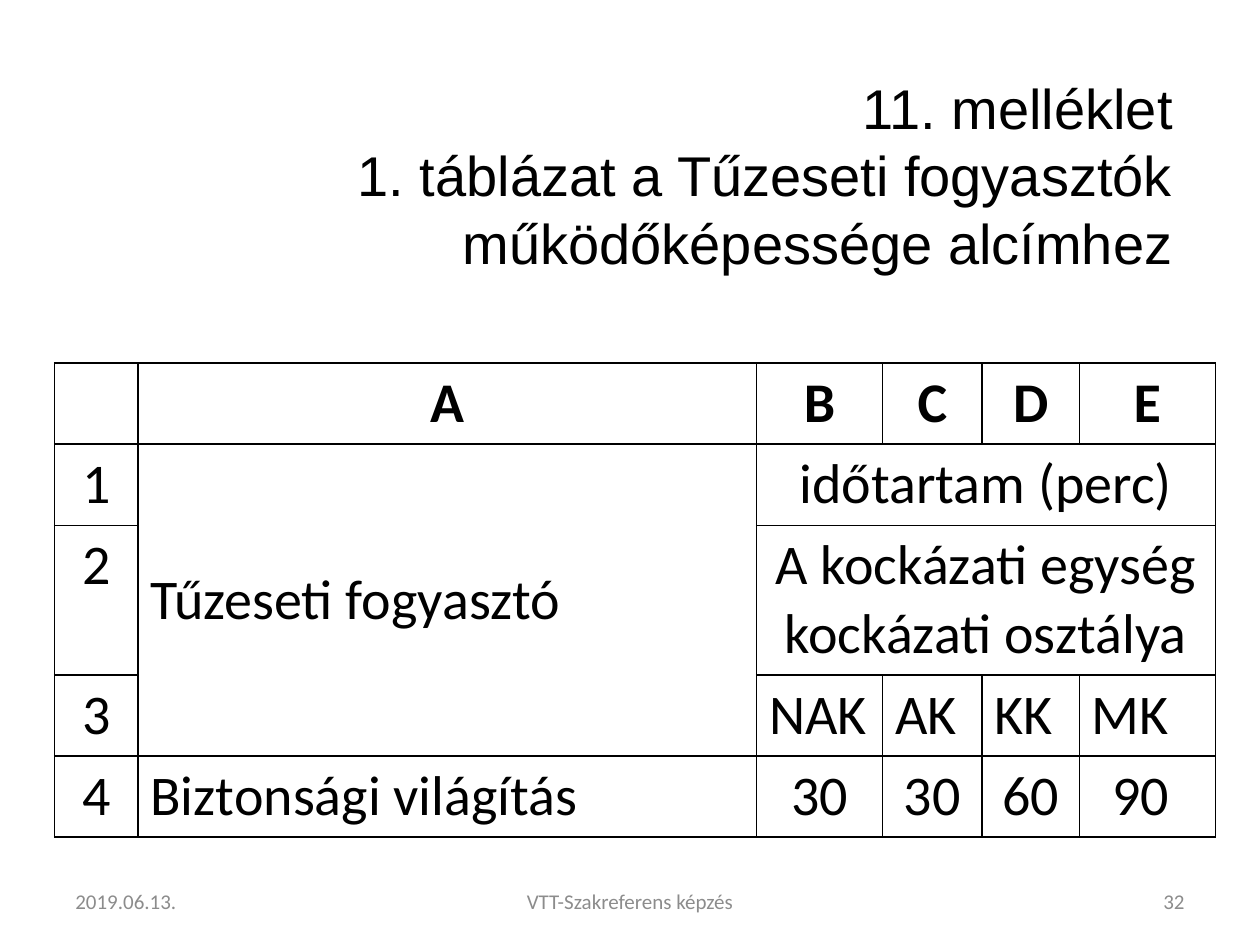
from lxml import etree
from pptx import Presentation
from pptx.dml.color import RGBColor
from pptx.enum.text import MSO_ANCHOR, PP_ALIGN
from pptx.oxml.ns import qn
from pptx.util import Cm, Pt

LEFT, MID, RIGHT = PP_ALIGN.LEFT, PP_ALIGN.CENTER, PP_ALIGN.RIGHT
FULL = PP_ALIGN.JUSTIFY
TOP, CENTER = MSO_ANCHOR.TOP, MSO_ANCHOR.MIDDLE
BLACK, GREY = "000000", "8C8C8C"

COLS = [1.68, 12.47, 2.54, 2.01, 1.96, 2.74]
ROWS = [1.63, 1.63, 3, 1.63, 1.63]
CELLS = [
    ["", "A", "B", "C", "D", "E"],
    ["1", "Tűzeseti fogyasztó", "időtartam (perc)", "", "", ""],
    ["2", "", "A kockázati egység kockázati osztálya", "", "", ""],
    ["3", "", "NAK", "AK", "KK", "MK"],
    ["4", "Biztonsági világítás", "30", "30", "60", "90 "],
]
SPANS = [((1, 1), (3, 1)), ((1, 2), (1, 5)), ((2, 2), (2, 5))]


def color(code):
    """Turn a hex string into a colour."""
    return RGBColor.from_string(code)


def style(para, size, face, code, align, bold=False):
    """Set the font and alignment of a paragraph."""
    para.alignment = align
    font = para.font
    font.size, font.name, font.bold = Pt(size), face, bold
    font.color.rgb = color(code)


def label(slide, box, lines, size, face, code, align):
    """Place a text box with one paragraph for each line."""
    frame = slide.shapes.add_textbox(*map(Cm, box)).text_frame
    frame.word_wrap = True
    frame.vertical_anchor = CENTER
    frame.text = "\n".join(lines)
    for para in frame.paragraphs:
        style(para, size, face, code, align)


def border(cell):
    """Draw a thin black line on each side of a cell."""
    props = cell._tc.get_or_add_tcPr()
    for side in ("a:lnL", "a:lnR", "a:lnT", "a:lnB"):
        line = etree.SubElement(props, qn(side), w=str(Pt(1)))
        fill = etree.SubElement(line, qn("a:solidFill"))
        etree.SubElement(fill, qn("a:srgbClr"), val=BLACK)


def align_of(row, col):
    """Choose the alignment of a table cell."""
    if col == 1 and row > 0:
        return LEFT
    return FULL if row == 3 and col > 1 else MID


def grid(slide, left, top):
    """Place the table of fire consumers."""
    size = (sum(COLS), sum(ROWS))
    table = slide.shapes.add_table(
        len(ROWS), len(COLS), *map(Cm, (left, top, *size))).table
    table.first_row = table.horz_banding = False
    for col, width in zip(table.columns, COLS):
        col.width = Cm(width)
    for row, height in zip(table.rows, ROWS):
        row.height = Cm(height)
    for r, texts in enumerate(CELLS):
        for c, text in enumerate(texts):
            cell = table.cell(r, c)
            cell.text = text
            cell.vertical_anchor = CENTER if (r, c) == (1, 1) else TOP
            style(cell.text_frame.paragraphs[0], 32, "Calibri", BLACK,
                  align_of(r, c), r == 0)
            border(cell)
            cell.fill.background()
    for start, end in SPANS:
        table.cell(*start).merge(table.cell(*end))


def title(slide, box):
    """Place the heading."""
    lines = ["11. melléklet",
             "1. táblázat a Tűzeseti fogyasztók működőképessége alcímhez"]
    label(slide, box, lines, 32, "Arial", BLACK, RIGHT)


def footer(slide, left, top, width, height):
    """Place the date, the course name and the page number."""
    side, mid = 5.92, 8.05
    parts = [("2019.06.13.", 0, side, LEFT),
             ("VTT-Szakreferens képzés", (width - mid) / 2, mid, MID),
             ("32", width - side, side, RIGHT)]
    for text, shift, wide, align in parts:
        label(slide, (left + shift, top, wide, height), [text],
              12, "Calibri", GREY, align)


def main():
    """Build and save the slide."""
    deck = Presentation()
    deck.slide_width, deck.slide_height = Cm(25.4), Cm(19.05)
    slide = deck.slides.add_slide(deck.slide_layouts[6])
    grid(slide, 1.1, 7.32)
    title(slide, (1.5, 1.32, 22.4, 4.4))
    footer(slide, 1.27, 17.65, 22.86, 1.02)
    deck.save("out.pptx")


if __name__ == "__main__":
    main()
